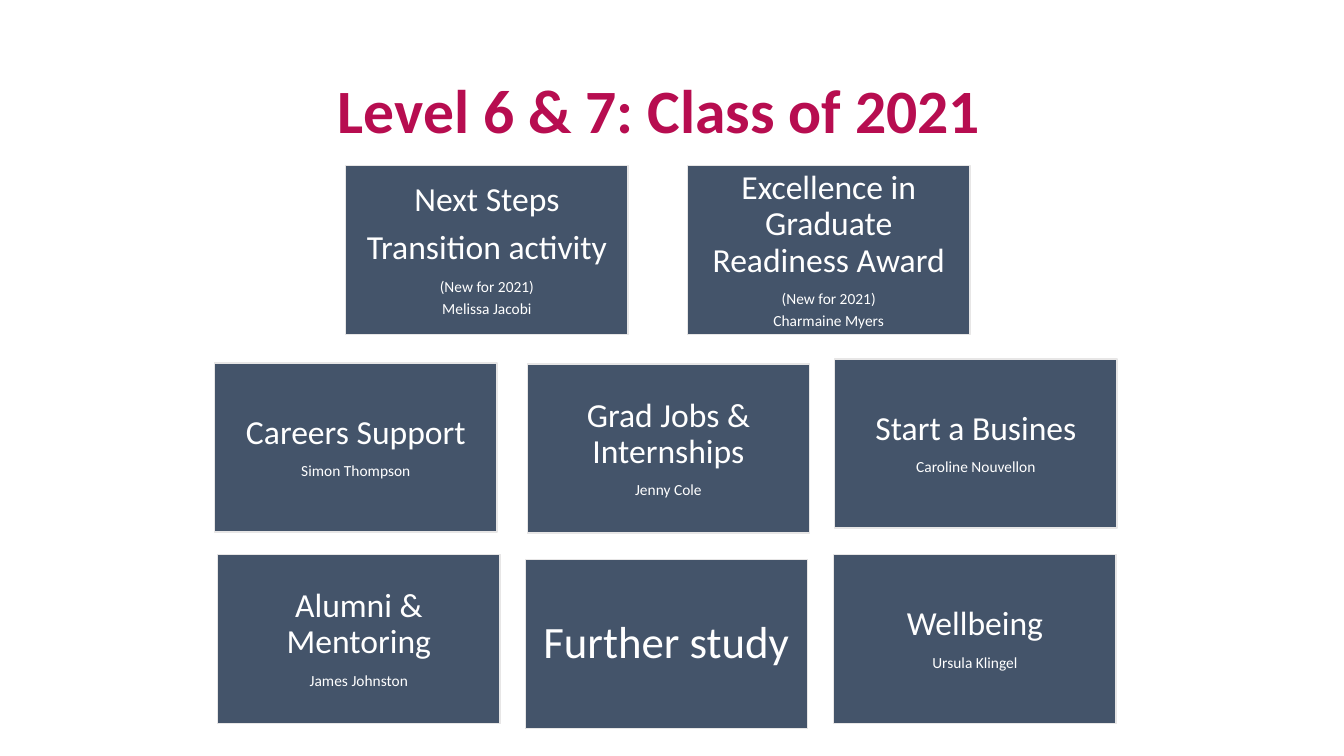
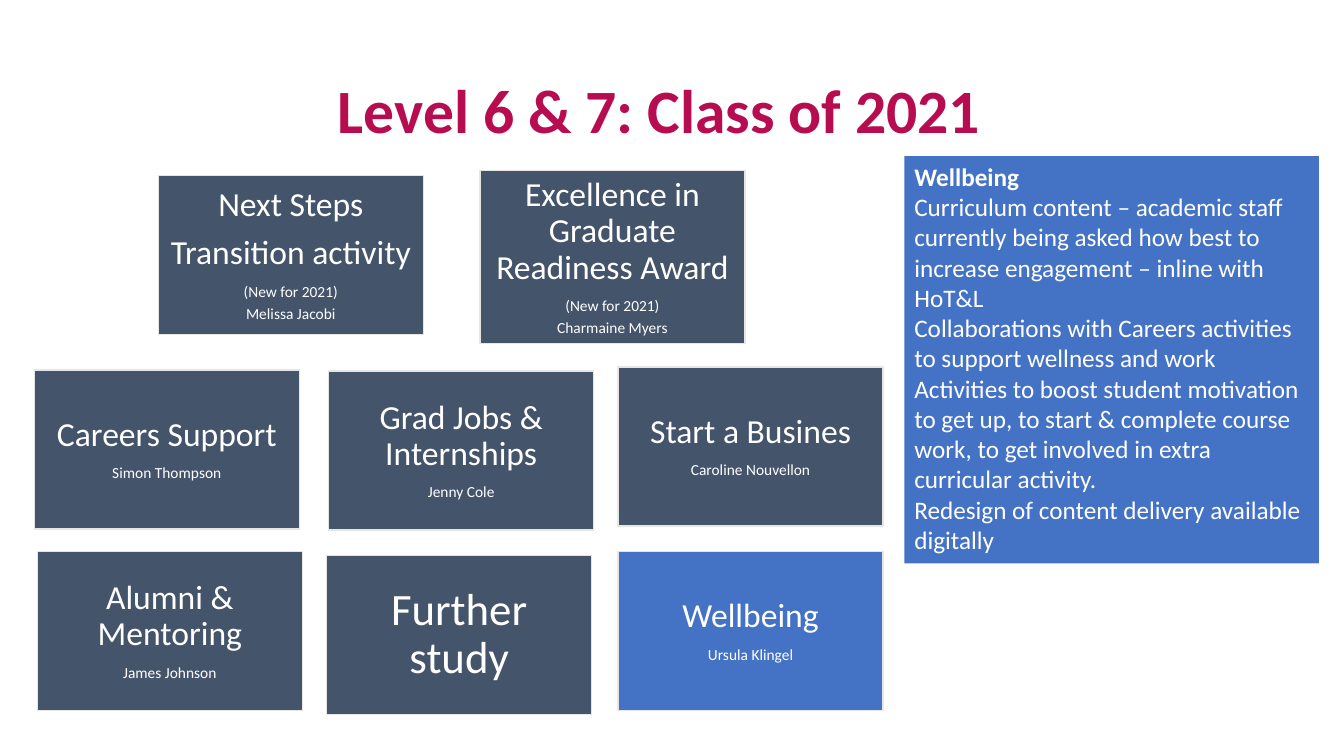
from dataclasses import dataclass, replace

from pptx import Presentation
from pptx import util as u
from pptx.dml.color import RGBColor
from pptx.enum import shapes, text

FONT = "Calibri"
TITLE = "Level 6 & 7: Class of 2021"
CRIMSON, SLATE, BLUE = "B70D50", "44546A", "4472C4"
WHITE, PALE = "FFFFFF", "E7E6E6"
NEW = "(New for 2021)"


@dataclass(frozen=True)
class Tile:
    heads: tuple[str, ...]
    notes: tuple[str, ...] = ()
    size: int = 24
    inset: float = 0.1
    fill: str = SLATE
    extra_height: float = 0


TILES = [
    Tile(("Next Steps", "Transition activity"), (NEW, "Melissa Jacobi")),
    Tile(("Excellence in Graduate Readiness Award",), (NEW, "Charmaine Myers")),
    Tile(("Careers Support",), ("Simon Thompson",)),
    Tile(("Grad Jobs & Internships",), ("Jenny Cole",)),
    Tile(("Start a Busines",), ("Caroline Nouvellon",)),
    Tile(("Alumni & Mentoring",), ("James Johnston",)),
    Tile(("Further study",), size=32, inset=0.13),
    Tile(("Wellbeing",), ("Ursula Klingel",)),
]
OVERVIEW_CORNERS = [
    (3.43, 1.64), (6.82, 1.64),
    (2.13, 3.6), (5.23, 3.61), (8.28, 3.56),
    (2.16, 5.5), (5.21, 5.55), (8.27, 5.5),
]
WELLBEING_CORNERS = [
    (1.57, 1.74), (4.76, 1.69),
    (0.34, 3.67), (3.26, 3.68), (6.13, 3.64),
    (0.37, 5.47), (3.24, 5.51), (6.13, 5.47),
]
WELLBEING_CHANGES = {
    1: {"extra_height": 0.14},
    5: {"notes": ("James Johnson",)},
    7: {"fill": BLUE},
}
WELLBEING_POINTS = [
    "Wellbeing",
    "Curriculum content – academic staff currently being asked how best to "
    "increase engagement – inline with HoT&L",
    "Collaborations with Careers activities to support wellness and work",
    "Activities to boost student motivation to get up, to start & complete "
    "course work, to get involved in extra curricular activity.",
    "Redesign of content delivery available digitally",
]


def rgb(value: str) -> RGBColor:
    return RGBColor.from_string(value)


def set_all(target, values: dict) -> None:
    for name, value in values.items():
        setattr(target, name, value)


def place(sp, left: float, top: float, width: float, height: float) -> None:
    set_all(sp, {"left": u.Inches(left), "top": u.Inches(top),
                 "width": u.Inches(width), "height": u.Inches(height)})


def write(p, words: str, size: int, color: str = WHITE, bold: bool = False,
          **layout) -> None:
    """Add one run; layout holds paragraph attributes."""
    r = p.add_run()
    r.text = words
    set_all(r.font, {"name": FONT, "size": u.Pt(size), "bold": bold})
    r.font.color.rgb = rgb(color)
    set_all(p, layout)


def paragraphs(tf, count: int) -> list:
    return [tf.paragraphs[0]] + [tf.add_paragraph() for _ in range(count - 1)]


def add_box(s, left: float, top: float, width: float, height: float, fill: str):
    sp = s.shapes.add_shape(
        shapes.MSO_SHAPE.RECTANGLE,
        *(u.Inches(v) for v in (left, top, width, height)))
    sp.shadow.inherit = False
    sp.fill.solid()
    sp.fill.fore_color.rgb = rgb(fill)
    sp.line.fill.background()
    sp.text_frame.word_wrap = True
    return sp


def add_tile(s, tile: Tile, corner: tuple[float, float],
             size: tuple[float, float]) -> None:
    width, height = size
    sp = add_box(s, *corner, width, height + tile.extra_height, tile.fill)
    sp.line.color.rgb = rgb(PALE)
    sp.line.width = u.Pt(1)
    tf = sp.text_frame
    sides = ("left", "top", "right", "bottom")
    set_all(tf, {f"margin_{side}": u.Inches(tile.inset) for side in sides})
    tf.vertical_anchor = text.MSO_ANCHOR.MIDDLE
    lines = ([(head, tile.size) for head in tile.heads]
             + [(note, 11) for note in tile.notes])
    for p, (words, points) in zip(paragraphs(tf, len(lines)), lines):
        write(p, words, points, alignment=text.PP_ALIGN.CENTER,
              line_spacing=0.9, space_after=u.Pt(points * 0.35))


def add_panel(s, points: list[str]) -> None:
    """Add the detail panel, with its first line as a bold heading."""
    tf = add_box(s, 8.97, 1.55, 4.11, 4.04, BLUE).text_frame
    tf.vertical_anchor = text.MSO_ANCHOR.TOP
    tf.auto_size = text.MSO_AUTO_SIZE.SHAPE_TO_FIT_TEXT
    for i, p in enumerate(paragraphs(tf, len(points))):
        write(p, points[i], 18, bold=i == 0, alignment=text.PP_ALIGN.LEFT)


def add_class_slide(prs, tiles: list[Tile], corners: list[tuple[float, float]],
                    size: tuple[float, float]):
    s = prs.slides.add_slide(prs.slide_layouts[5])
    title = s.shapes.title
    place(title, 3.25, 0.4, 6.7, 1.45)
    set_all(title.text_frame, {"auto_size": text.MSO_AUTO_SIZE.NONE,
                               "vertical_anchor": text.MSO_ANCHOR.MIDDLE,
                               "word_wrap": True})
    write(title.text_frame.paragraphs[0], TITLE, 44, CRIMSON, True,
          alignment=text.PP_ALIGN.LEFT, line_spacing=0.9)
    for tile, corner in zip(tiles, corners):
        add_tile(s, tile, corner, size)
    return s


def main() -> None:
    prs = Presentation()
    set_all(prs, {"slide_width": u.Inches(13.33),
                  "slide_height": u.Inches(7.5)})
    add_class_slide(prs, TILES, OVERVIEW_CORNERS, (2.8, 1.68))
    wellbeing_tiles = [replace(tile, **WELLBEING_CHANGES.get(i, {}))
                       for i, tile in enumerate(TILES)]
    s = add_class_slide(prs, wellbeing_tiles, WELLBEING_CORNERS, (2.63, 1.58))
    add_panel(s, WELLBEING_POINTS)
    prs.save("out.pptx")


if __name__ == "__main__":
    main()
